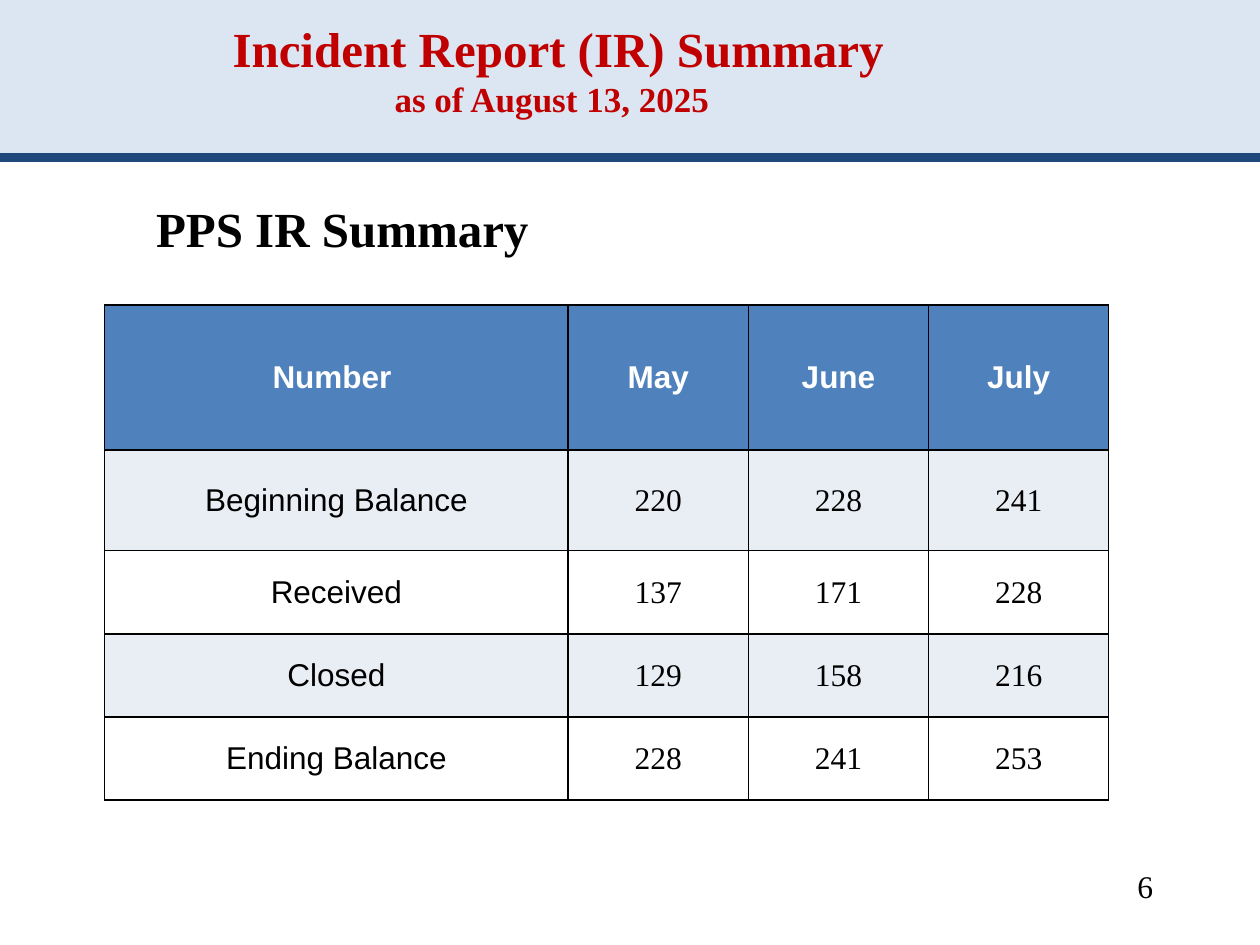
from lxml import etree
from pptx import Presentation
from pptx.dml.color import RGBColor
from pptx.enum.shapes import MSO_CONNECTOR, MSO_SHAPE
from pptx.enum.text import MSO_ANCHOR, PP_ALIGN
from pptx.oxml.ns import qn
from pptx.util import Inches, Pt

RECTANGLE = MSO_SHAPE.RECTANGLE
STRAIGHT = MSO_CONNECTOR.STRAIGHT
LEFT, CENTER, RIGHT = PP_ALIGN.LEFT, PP_ALIGN.CENTER, PP_ALIGN.RIGHT
TOP, MIDDLE, BOTTOM = MSO_ANCHOR.TOP, MSO_ANCHOR.MIDDLE, MSO_ANCHOR.BOTTOM

SERIF, SANS = "Times New Roman", "Arial"
BLACK, WHITE, RED, NAVY = "000000", "FFFFFF", "C00000", "1F497D"
BANNER, HEADER, BAND = "DCE6F2", "4F81BD", "E9EDF4"


def color(value):
    return RGBColor.from_string(value)


class SlideBuilder:
    def __init__(self, page):
        self.page = page

    def style(self, font, size, name=SERIF, ink=BLACK, bold=False):
        font.size, font.name, font.bold = Pt(size), name, bold
        font.color.rgb = color(ink)

    def rectangle(self, left, top, width, height, fill):
        shape = self.page.shapes.add_shape(
            RECTANGLE, Inches(left), Inches(top), Inches(width), Inches(height))
        shape.shadow.inherit = False
        shape.fill.solid()
        shape.fill.fore_color.rgb = color(fill)
        shape.line.fill.background()

    def line(self, x1, y1, x2, y2, ink, weight):
        line = self.page.shapes.add_connector(
            STRAIGHT, Inches(x1), Inches(y1), Inches(x2), Inches(y2))
        line.line.color.rgb = color(ink)
        line.line.width = Pt(weight)
        etree.SubElement(line._element.spPr, qn("a:effectLst"))

    def text(self, left, top, width, height, lines, align=LEFT, anchor=TOP,
             ink=BLACK, bold=False):
        """Lines are (words, size) pairs of one paragraph."""
        box = self.page.shapes.add_textbox(
            Inches(left), Inches(top), Inches(width), Inches(height))
        frame = box.text_frame
        frame.word_wrap = True
        frame.vertical_anchor = anchor
        para = frame.paragraphs[0]
        para.alignment = align
        for index, (words, size) in enumerate(lines):
            if index:
                para.add_line_break()
            span = para.add_run()
            span.text = words
            self.style(span.font, size, ink=ink, bold=bold)

    def border(self, cell, ink, weight):
        properties = cell._tc.get_or_add_tcPr()
        for index, side in enumerate(("a:lnL", "a:lnR", "a:lnT", "a:lnB")):
            edge = etree.Element(qn(side), w=str(Pt(weight)))
            fill = etree.SubElement(edge, qn("a:solidFill"))
            etree.SubElement(fill, qn("a:srgbClr"), val=ink)
            properties.insert(index, edge)

    def table(self, left, top, widths, heights, rows):
        table = self.page.shapes.add_table(
            len(rows), len(widths), Inches(left), Inches(top),
            Inches(sum(widths)), Inches(sum(heights))).table
        for column, width in zip(table.columns, widths):
            column.width = Inches(width)
        for row, height in zip(table.rows, heights):
            row.height = Inches(height)
        for r, values in enumerate(rows):
            header = r == 0
            fill = HEADER if header else BAND if r % 2 else WHITE
            for c, value in enumerate(values):
                cell = table.cell(r, c)
                number = not header and c > 0
                cell.text = str(value)
                cell.vertical_anchor = MIDDLE
                if number:
                    cell.margin_left = cell.margin_right = Inches(0.01)
                    cell.margin_top, cell.margin_bottom = Inches(0.01), 0
                cell.fill.solid()
                cell.fill.fore_color.rgb = color(fill)
                self.border(cell, BLACK, 1)
                para = cell.text_frame.paragraphs[0]
                para.alignment = CENTER
                self.style(para.font, 18, SERIF if number else SANS,
                           WHITE if header else BLACK, header)


def main():
    deck = Presentation()
    deck.slide_width, deck.slide_height = Inches(10), Inches(7.5)
    builder = SlideBuilder(deck.slides.add_slide(deck.slide_layouts[6]))

    # Banner and title
    builder.rectangle(0, 0, 10, 1.28, BANNER)
    builder.line(0, 1.25, 10, 1.25, NAVY, 5.5)
    builder.text(0.17, 0.17, 8.42, 0.83,
                 [(" Incident Report (IR) Summary", 28),
                  ("as of August 13, 2025", 20)],
                 CENTER, BOTTOM, RED, True)

    # Monthly balances
    builder.text(1.14, 1.53, 7.67, 0.57, [("PPS IR Summary", 28)], bold=True)
    builder.table(0.83, 2.42, [3.68] + [1.43] * 3, [1.15, 0.8] + [0.66] * 3, [
        ("Number ", "May", "June", "July"),
        ("Beginning Balance", 220, 228, 241),
        ("Received", 137, 171, 228),
        ("Closed", 129, 158, 216),
        ("Ending Balance", 228, 241, 253),
    ])

    # Page number
    builder.text(7.17, 6.83, 2.08, 0.5, [("6", 18)], RIGHT)

    deck.save("out.pptx")


if __name__ == "__main__":
    main()
